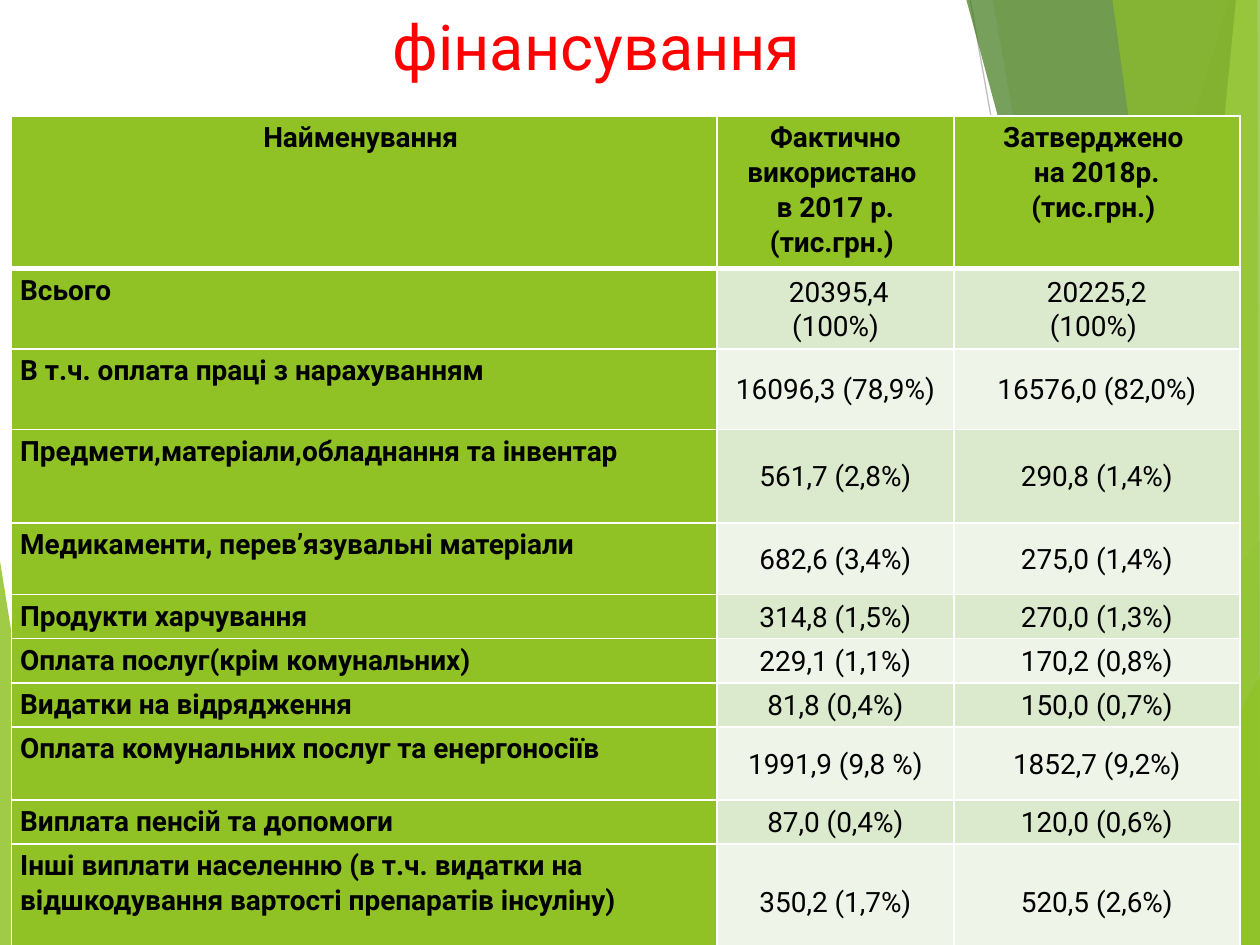
import lxml.etree
import pptx
import pptx.dml.color
import pptx.enum.shapes
import pptx.enum.text
import pptx.oxml.ns
import pptx.util

Inches = pptx.util.Inches
Pt = pptx.util.Pt
RGBColor = pptx.dml.color.RGBColor
ALIGN = pptx.enum.text.PP_ALIGN
ANCHOR = pptx.enum.text.MSO_ANCHOR
qn = pptx.oxml.ns.qn

WHITE = RGBColor(0xFF, 0xFF, 0xFF)
BLACK = RGBColor(0x00, 0x00, 0x00)
RED = RGBColor(0xFF, 0x00, 0x00)
GREEN = RGBColor(0x90, 0xC2, 0x26)
LEAF = RGBColor(0x54, 0xA0, 0x21)
FOREST = RGBColor(0x3F, 0x78, 0x19)
LIME = RGBColor(0xC0, 0xE4, 0x74)
BAND_DARK = RGBColor(0xDB, 0xE9, 0xCD)
BAND_LIGHT = RGBColor(0xEE, 0xF4, 0xE8)
GREY_LIGHT = RGBColor(0xD9, 0xD9, 0xD9)
GREY = RGBColor(0xBF, 0xBF, 0xBF)
FONT = "Roboto"

# Decoration: corner points in inches, colour, opacity in percent
LEFT_FACET = ([(-0.01, 4.39), (0.49, 7.5), (-0.01, 7.5)], GREEN, 85)
RAYS = [((5.61, 7.5), (10.01, 4.57), GREY_LIGHT), ((7.7, 0), (9.04, 7.5), GREY)]
RIGHT_FACETS = [
    ([(9.75, 0), (7.54, 7.5), (10.01, 7.5), (10.01, 0)], GREEN, 30),
    ([(7.88, 0), (9.19, 7.5), (10.01, 7.5), (10.01, 0)], GREEN, 20),
    ([(7.26, 7.5), (10, 4.29), (10.01, 7.5)], LEAF, 72),
    ([(7.67, 0), (9.7, 7.5), (10.01, 7.5), (10.01, 0)], FOREST, 70),
    ([(9.81, 0), (9.07, 7.5), (10.01, 7.5), (10, 0)], LIME, 70),
    ([(8.83, 0), (9.86, 7.5), (10, 7.5), (9.98, 0)], GREEN, 65),
    ([(8.81, 7.5), (10.01, 5.35), (10.01, 7.5)], GREEN, 80),
]

# Table: a line break in a cell starts a new paragraph
COLUMN_WIDTHS = [5.6, 1.88, 2.27]
ROWS = [
    (1.21, "Найменування ", "Фактично використано \nв 2017 р. (тис.грн.) ",
     "Затверджено \nна 2018р.\n(тис.грн.) "),
    (0.64, "Всього", " 20395,4\n(100%)", "20225,2\n(100%) "),
    (0.64, "В т.ч. оплата праці з нарахуванням", "16096,3 (78,9%)", "16576,0 (82,0%)"),
    (0.74, "Предмети,матеріали,обладнання та інвентар", "561,7 (2,8%)", "290,8 (1,4%)"),
    (0.57, "Медикаменти, перев’язувальні матеріали", "682,6 (3,4%)", "275,0 (1,4%)"),
    (0.35, "Продукти харчування", "314,8 (1,5%)", "270,0 (1,3%)"),
    (0.35, "Оплата послуг(крім комунальних)", "229,1 (1,1%)", "170,2 (0,8%)"),
    (0.35, "Видатки на відрядження", "81,8 (0,4%)", "150,0 (0,7%)"),
    (0.58, "Оплата комунальних послуг та енергоносіїв", "1991,9 (9,8 %)", "1852,7 (9,2%)"),
    (0.35, "Виплата пенсій та допомоги", "87,0 (0,4%)", "120,0 (0,6%)"),
    (0.92, "Інші виплати населенню (в т.ч. видатки на відшкодування вартості "
     "препаратів інсуліну)", "350,2 (1,7%)", "520,5 (2,6%)"),
]


def add_span(para, text, size, color, bold=False):
    span = para.add_run()
    span.text = text
    span.font.name = FONT
    span.font.size = Pt(size)
    span.font.bold = bold
    span.font.color.rgb = color


def add_facet(page, left, top, points, color, opacity):
    corners = [(left + Inches(x), top + Inches(y)) for x, y in points]
    builder = page.shapes.build_freeform(*corners[0])
    builder.add_line_segments(corners[1:], close=True)
    facet = builder.convert_to_shape()
    facet.shadow.inherit = False
    facet.line.fill.background()
    facet.fill.solid()
    facet.fill.fore_color.rgb = color
    tint = facet.fill._xPr.find(qn("a:solidFill"))[0]
    lxml.etree.SubElement(tint, qn("a:alpha"), val=str(opacity * 1000))


def add_ray(page, left, top, start, end, color):
    ray = page.shapes.add_connector(
        pptx.enum.shapes.MSO_CONNECTOR.STRAIGHT,
        left + Inches(start[0]), top + Inches(start[1]),
        left + Inches(end[0]), top + Inches(end[1]))
    ray.line.color.rgb = color
    ray.line.width = Pt(0.75)
    lxml.etree.SubElement(ray._element.spPr, qn("a:effectLst"))


def add_decoration(page, left, top):
    add_facet(page, left, top, *LEFT_FACET)
    for ray in RAYS:
        add_ray(page, left, top, *ray)
    for facet in RIGHT_FACETS:
        add_facet(page, left, top, *facet)


def add_title(page, left, top, width, height):
    box = page.shapes.add_textbox(left, top, width, height)
    box.text_frame.word_wrap = True
    para = box.text_frame.paragraphs[0]
    para.alignment = ALIGN.CENTER
    add_span(para, "фінансування", 36, RED)


def set_borders(cell, bottom_width):
    properties = cell._tc.get_or_add_tcPr()
    for side, width in (("L", 1), ("R", 1), ("T", 1), ("B", bottom_width)):
        edge = lxml.etree.SubElement(properties, qn("a:ln" + side), w=str(Pt(width)))
        fill = lxml.etree.SubElement(edge, qn("a:solidFill"))
        lxml.etree.SubElement(fill, qn("a:srgbClr"), val=str(WHITE))


def fill_cell(cell, text, row, column):
    is_header, is_label = row == 0, column == 0
    cell.margin_left = cell.margin_right = Inches(0.07)
    cell.margin_top = cell.margin_bottom = Inches(0.03)
    cell.vertical_anchor = ANCHOR.TOP if is_header or is_label else ANCHOR.MIDDLE
    set_borders(cell, 3 if is_header else 1)
    cell.fill.solid()
    if is_header or is_label:
        cell.fill.fore_color.rgb = GREEN
    else:
        cell.fill.fore_color.rgb = BAND_DARK if row % 2 else BAND_LIGHT
    frame = cell.text_frame
    for index, line in enumerate(text.split("\n")):
        para = frame.add_paragraph() if index else frame.paragraphs[0]
        para.alignment = ALIGN.LEFT if is_label and not is_header else ALIGN.CENTER
        para.line_spacing = 1.07
        add_span(para, line, 16, BLACK, bold=is_header or is_label)


def add_budget_table(page, left, top, width, height):
    table = page.shapes.add_table(
        len(ROWS), len(COLUMN_WIDTHS), left, top, width, height).table
    for column, column_width in zip(table.columns, COLUMN_WIDTHS):
        column.width = Inches(column_width)
    for row, (row_height, *texts) in enumerate(ROWS):
        table.rows[row].height = Inches(row_height)
        for column, text in enumerate(texts):
            fill_cell(table.cell(row, column), text, row, column)


def main():
    deck = pptx.Presentation()
    deck.slide_width, deck.slide_height = Inches(10), Inches(7.5)
    page = deck.slides.add_slide(deck.slide_layouts[6])
    page.background.fill.solid()
    page.background.fill.fore_color.rgb = WHITE
    add_decoration(page, Inches(0), Inches(0))
    add_title(page, Inches(0.09), Inches(0.01), Inches(9.29), Inches(1.44))
    add_budget_table(page, Inches(0.09), Inches(0.92), Inches(9.75), Inches(6.73))
    deck.save("out.pptx")


if __name__ == "__main__":
    main()
